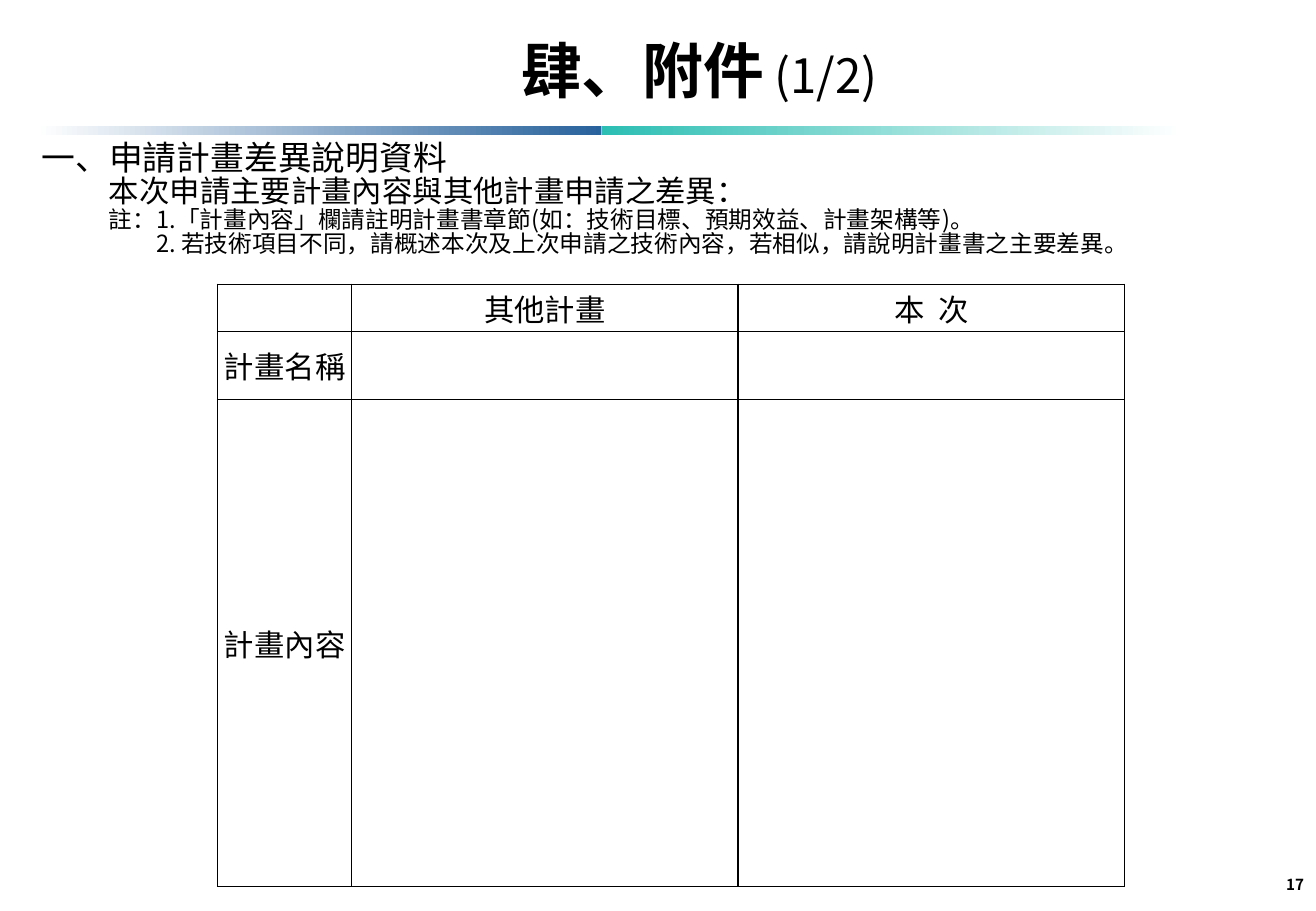
from lxml.etree import SubElement
from pptx import Presentation
from pptx.dml.color import RGBColor
from pptx.enum.shapes import MSO_SHAPE
from pptx.enum.text import MSO_ANCHOR, PP_ALIGN
from pptx.oxml.ns import qn
from pptx.util import Pt

FONT = "Noto Sans CJK SC"


def color(value):
    return RGBColor.from_string(value)


def style(span, size, bold=False):
    """Format a run in black, with the same face for Latin and Chinese."""
    span.font.size = Pt(size)
    span.font.bold = bold
    span.font.name = FONT
    span.font.color.rgb = color("000000")
    SubElement(span.font._element, qn("a:ea"), typeface=FONT)


deck = Presentation()
deck.slide_width, deck.slide_height = Pt(780), Pt(540)
page = deck.slides.add_slide(deck.slide_layouts[5])

# Two-part gradient rule under the title
for left, width, start, end in [
    (21, 335.5, "FFFFFF", "28629C"),
    (356.5, 344, "2CBEB3", "FFFFFF"),
]:
    bar = page.shapes.add_shape(MSO_SHAPE.RECTANGLE, Pt(left), Pt(74.5), Pt(width), Pt(5.5))
    bar.shadow.inherit = False
    bar.line.fill.background()
    bar.fill.gradient()
    bar.fill.gradient_angle = 0
    for stop, position, shade in zip(bar.fill.gradient_stops, (0, 1), (start, end)):
        stop.position = position
        stop.color.rgb = color(shade)

# Title
title = page.shapes.title
title.left, title.top, title.width, title.height = Pt(111.5), Pt(8.5), Pt(606), Pt(65.5)
title.text_frame.vertical_anchor = MSO_ANCHOR.MIDDLE
heading = title.text_frame.paragraphs[0]
heading.alignment = PP_ALIGN.CENTER
for text, size, bold in [("肆、附件", 36, True), (" (1/2)", 28, False)]:
    span = heading.add_run()
    span.text = text
    style(span, size, bold)

# Section heading
section = page.shapes.add_textbox(Pt(17.5), Pt(77.5), Pt(262), Pt(32))
section.text_frame.word_wrap = False
section.text_frame.text = "一、申請計畫差異說明資料"
style(section.text_frame.paragraphs[0].runs[0], 20)

# Explanation and notes
notes = page.shapes.add_textbox(Pt(29.5), Pt(102), Pt(668), Pt(64))
notes.text_frame.word_wrap = True
lines = [
    ("本次申請主要計畫內容與其他計畫申請之差異：", 18, 28),
    ("註：1.「計畫內容」欄請註明計畫書章節(如：技術目標、預期效益、計畫架構等)。", 14, 28),
    ("2. 若技術項目不同，請概述本次及上次申請之技術內容，若相似，請說明計畫書之主要差異。", 14, 56),
]
notes.text_frame.text = "\n".join(text for text, size, indent in lines)
for para, (text, size, indent) in zip(notes.text_frame.paragraphs, lines):
    para.line_spacing = 0.85
    para._p.get_or_add_pPr().set("indent", str(Pt(indent)))
    style(para.runs[0], size)

# Comparison table
rows = [("", "其他計畫", "本  次"), ("計畫名稱", "", ""), ("計畫內容", "", "")]
column_widths = (79.5, 229, 229)
row_heights = (28, 40.5, 288.5)
table = page.shapes.add_table(
    3, 3, Pt(129), Pt(168.5), Pt(sum(column_widths)), Pt(sum(row_heights))
).table
table.first_row = table.horz_banding = False
for column, width in zip(table.columns, column_widths):
    column.width = Pt(width)
for row, height, texts in zip(table.rows, row_heights, rows):
    row.height = Pt(height)
    for cell, text in zip(row.cells, texts):
        cell.margin_left = cell.margin_right = Pt(1.5)
        cell.margin_top = cell.margin_bottom = 0
        cell.vertical_anchor = MSO_ANCHOR.MIDDLE
        properties = cell._tc.get_or_add_tcPr()
        for side in ("lnL", "lnR", "lnT", "lnB"):
            border = SubElement(properties, qn(f"a:{side}"), w=str(Pt(1)))
            fill = SubElement(border, qn("a:solidFill"))
            SubElement(fill, qn("a:srgbClr"), val="000000")
        cell.fill.background()
        if text:
            cell.text_frame.text = text
            para = cell.text_frame.paragraphs[0]
            para.alignment = PP_ALIGN.CENTER
            style(para.runs[0], 18)

# Page number
number = page.shapes.add_textbox(Pt(604.5), Pt(510), Pt(175.5), Pt(28.5))
number.text_frame.word_wrap = True
number.text_frame.vertical_anchor = MSO_ANCHOR.MIDDLE
number.text_frame.text = "17"
number.text_frame.paragraphs[0].alignment = PP_ALIGN.RIGHT
style(number.text_frame.paragraphs[0].runs[0], 9, True)

deck.save("out.pptx")
